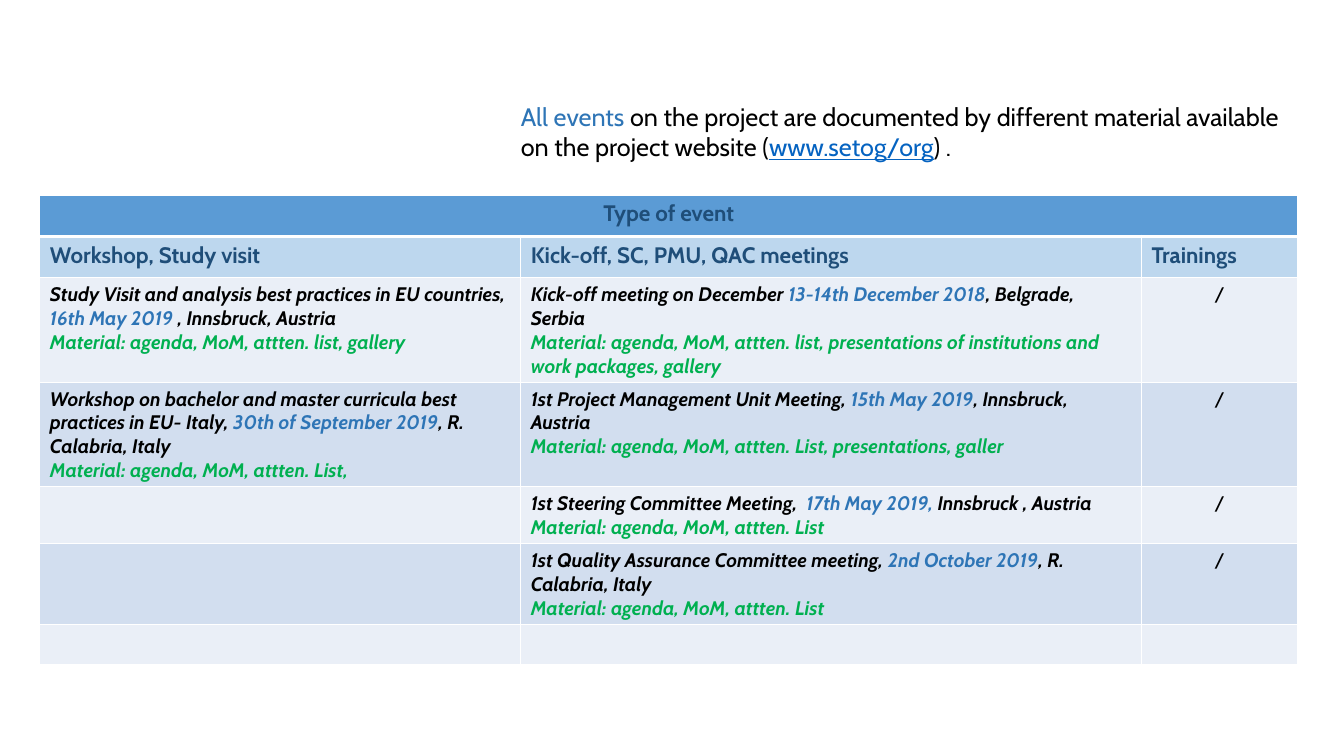
"""Builds a slide with a table of documented project events."""
from lxml import etree
from pptx import Presentation
from pptx.dml.color import RGBColor
from pptx.enum.text import PP_ALIGN
from pptx.oxml.ns import qn
from pptx.util import Pt

CENTER, LEFT = PP_ALIGN.CENTER, PP_ALIGN.LEFT
FONT = "Cabin"
COLORS = {
    "text": "000000", "date": "2E75B6", "link": "0563C1", "material": "00B050",
    "heading": "1F4E79", "title_fill": "5B9BD5", "heading_fill": "BDD7EE",
    "odd_fill": "EAEFF7", "even_fill": "D2DEEF", "border": "FFFFFF",
}

INTRO = [
    ("All events ", "date"),
    ("on the project are documented by different material available on the project website (", "text"),
    ("www.setog/org", "link"),
    (") .", "text"),
]
TABLE_TITLE = "Type of event"
HEADINGS = ["Workshop, Study visit", "Kick-off, SC, PMU, QAC meetings", "Trainings"]
MATERIAL = "Material: agenda, MoM, attten. "
NO_TRAINING = "/"
# Each event: text before the date, date, text after the date, list of material
EVENTS = [
    (("Study Visit and analysis best practices in EU countries, ", "16th May 2019 ",
      ", Innsbruck, Austria", "list, gallery"),
     ("Kick-off meeting on December ", "13-14th December 2018", ", Belgrade, Serbia",
      "list, presentations of institutions and work packages, gallery")),
    (("Workshop on bachelor and master curricula best practices in EU- Italy, ",
      "30th of September 2019", ", R. Calabria, Italy", "List,"),
     ("1st Project Management Unit Meeting, ", "15th May 2019", ", Innsbruck, Austria",
      "List, presentations, galler")),
    (None,
     ("1st Steering Committee Meeting,  ", "17th May 2019, ", "Innsbruck , Austria", "List")),
    (None,
     ("1st Quality Assurance Committee meeting, ", "2nd October 2019", ", R. Calabria, Italy", "List")),
    (None, None),
]
COL_WIDTHS = [343.5, 443.5, 111.5]
ROW_HEIGHTS = [29.5, 29.5, 74.5, 74.5, 40.5, 57.5, 29]


def rgb(name):
    return RGBColor.from_string(COLORS[name])


def add_runs(p, runs, size, bold=False, italic=False, align=LEFT):
    p.alignment = align
    for text, color in runs:
        r = p.add_run()
        r.text = text
        r.font.name, r.font.size = FONT, Pt(size)
        r.font.bold, r.font.italic = bold, italic
        r.font.underline = color == "link"
        r.font.color.rgb = rgb(color)


def style_cell(cell, fill, bottom=1):
    cell.fill.solid()
    cell.fill.fore_color.rgb = rgb(fill)
    tcPr = cell._tc.get_or_add_tcPr()
    for i, (side, width) in enumerate([("L", 1), ("R", 1), ("T", 1), ("B", bottom)]):
        ln = etree.Element(qn("a:ln" + side), w=str(Pt(width)))
        solid = etree.SubElement(ln, qn("a:solidFill"))
        etree.SubElement(solid, qn("a:srgbClr"), val=COLORS["border"])
        tcPr.insert(i, ln)


def add_event(cell, event):
    before, date, after, material = event
    tf = cell.text_frame
    runs = [(before, "text"), (date, "date"), (after, "text")]
    add_runs(tf.paragraphs[0], runs, 14, True, True)
    add_runs(tf.add_paragraph(), [(MATERIAL + material, "material")], 14, True, True)


def add_events_table(s):
    table = s.shapes.add_table(len(ROW_HEIGHTS), len(COL_WIDTHS), Pt(28.5), Pt(139.5),
                               Pt(sum(COL_WIDTHS)), Pt(sum(ROW_HEIGHTS))).table
    table.first_row = table.horz_banding = False
    for column, width in zip(table.columns, COL_WIDTHS):
        column.width = Pt(width)
    for row, height in zip(table.rows, ROW_HEIGHTS):
        row.height = Pt(height)

    title = table.cell(0, 0)
    title.merge(table.cell(0, len(COL_WIDTHS) - 1))
    add_runs(title.text_frame.paragraphs[0], [(TABLE_TITLE, "heading")], 16, True, align=CENTER)
    for col, heading in enumerate(HEADINGS):
        style_cell(table.cell(0, col), "title_fill", bottom=3)
        cell = table.cell(1, col)
        style_cell(cell, "heading_fill")
        add_runs(cell.text_frame.paragraphs[0], [(heading, "heading")], 16, True)

    for row, events in enumerate(EVENTS, start=2):
        for col in range(len(COL_WIDTHS)):
            style_cell(table.cell(row, col), "even_fill" if row % 2 else "odd_fill")
        for col, event in enumerate(events):
            if event:
                add_event(table.cell(row, col), event)
        if any(events):
            p = table.cell(row, 2).text_frame.paragraphs[0]
            add_runs(p, [(NO_TRAINING, "text")], 14, align=CENTER)


def main():
    prs = Presentation()
    prs.slide_width, prs.slide_height = Pt(960), Pt(540)
    s = prs.slides.add_slide(prs.slide_layouts[6])
    tf = s.shapes.add_textbox(Pt(365), Pt(69), Pt(570), Pt(51)).text_frame
    tf.word_wrap = True
    add_runs(tf.paragraphs[0], INTRO, 18)
    add_events_table(s)
    prs.save("out.pptx")


if __name__ == "__main__":
    main()
